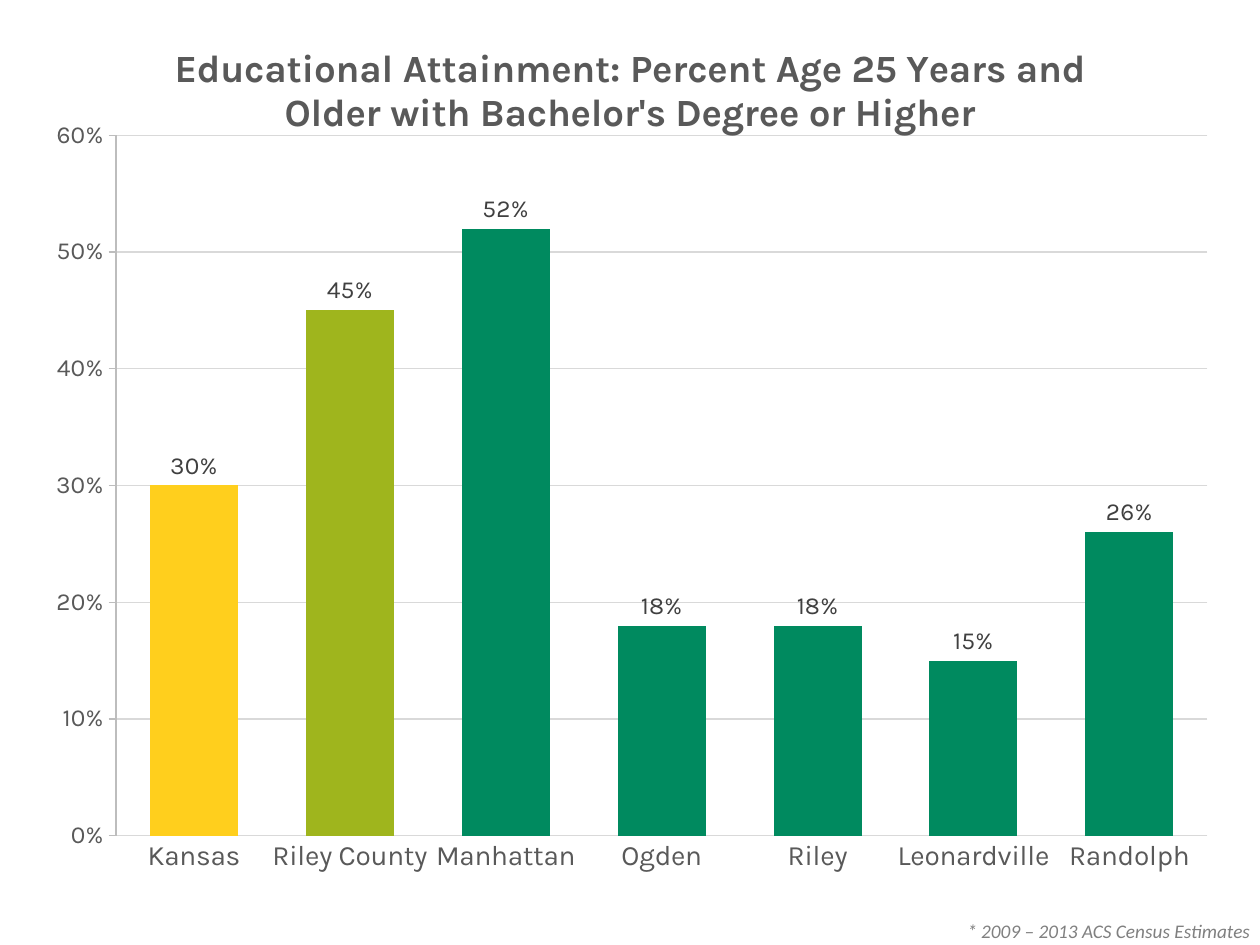
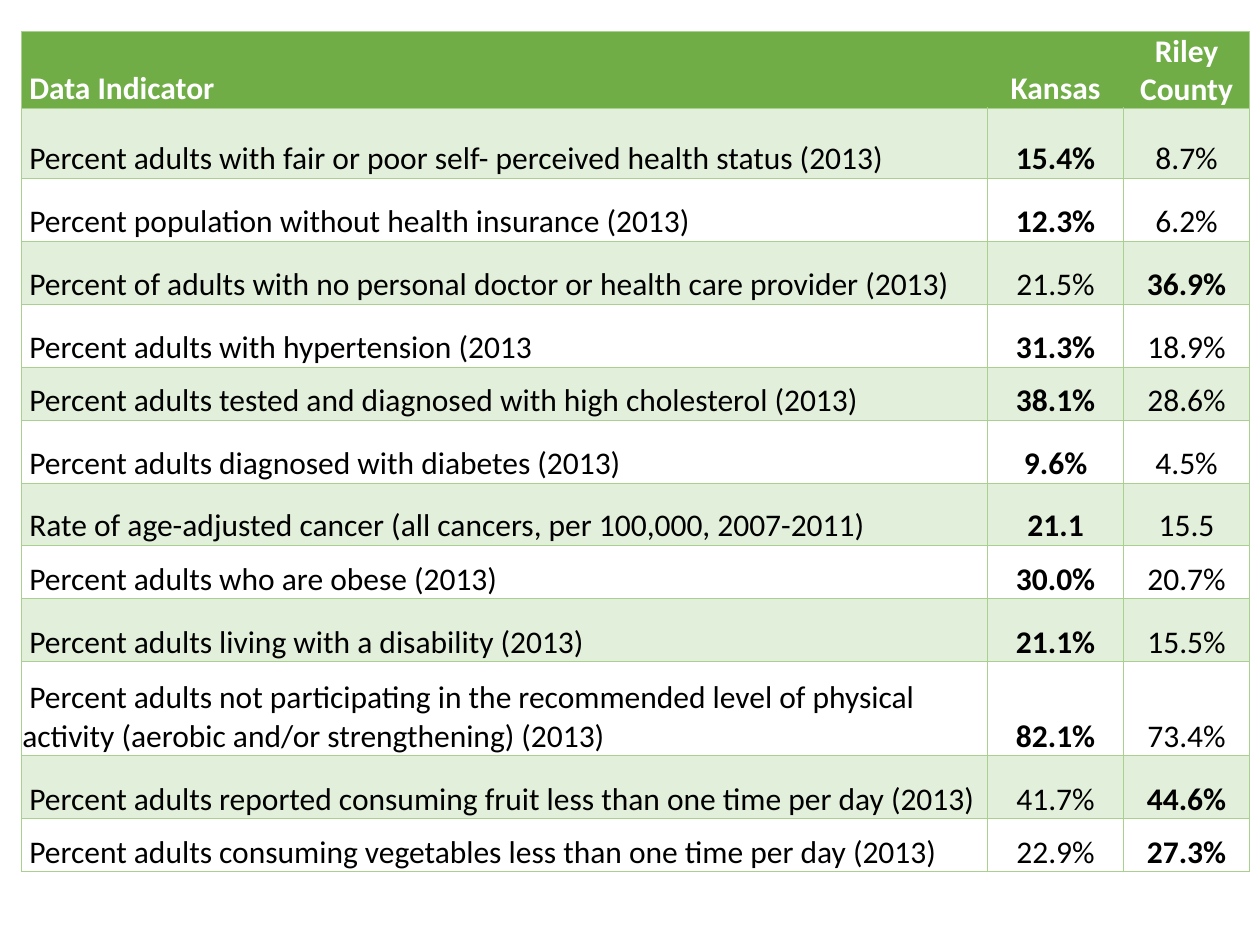
from dataclasses import dataclass

from lxml import etree
from pptx import Presentation
from pptx.chart.data import CategoryChartData
from pptx.dml.color import RGBColor
from pptx.enum.chart import XL_CHART_TYPE, XL_LABEL_POSITION, XL_TICK_MARK
from pptx.enum.text import MSO_ANCHOR, PP_ALIGN
from pptx.oxml.ns import qn
from pptx.slide import Slide
from pptx.table import _Cell
from pptx.text.text import Font
from pptx.util import Cm, Pt

COLUMN_CLUSTERED = XL_CHART_TYPE.COLUMN_CLUSTERED
OUTSIDE_END = XL_LABEL_POSITION.OUTSIDE_END
TICK_NONE, TICK_OUT = XL_TICK_MARK.NONE, XL_TICK_MARK.OUTSIDE
BOTTOM = MSO_ANCHOR.BOTTOM
LEFT, CENTER = PP_ALIGN.LEFT, PP_ALIGN.CENTER

# Shared fonts and colours
BODY_FONT, CHART_FONT = "Calibri", "Karla"
WHITE = RGBColor(0xFF, 0xFF, 0xFF)
BLACK = RGBColor(0x00, 0x00, 0x00)
CHART_TEXT = RGBColor(0x59, 0x59, 0x59)
LABEL_TEXT = RGBColor(0x40, 0x40, 0x40)
NOTE_GREY = RGBColor(0x80, 0x80, 0x80)
GRID_GREY = RGBColor(0xD9, 0xD9, 0xD9)
AXIS_GREY = RGBColor(0xBD, 0xBD, 0xBD)
STATE_YELLOW = RGBColor(0xFF, 0xCF, 0x1D)
COUNTY_LIME = RGBColor(0x9F, 0xB5, 0x1D)
CITY_GREEN = RGBColor(0x00, 0x8A, 0x5F)
SERIES_GREEN = RGBColor(0x06, 0x62, 0x43)
HEADER_GREEN = RGBColor(0x70, 0xAD, 0x47)
BAND_GREEN = RGBColor(0xE2, 0xEF, 0xDA)
BORDER_GREEN = RGBColor(0xA9, 0xD0, 0x8E)

# Chart size in cm
CHART_WIDTH, CHART_HEIGHT = 25.4, 18.85


@dataclass
class Place:
    name: str
    share: float
    color: RGBColor = CITY_GREEN


@dataclass
class Indicator:
    label: str
    kansas: str
    county: str
    height: float = 1.27  # cm


PLACES = [
    Place("Kansas", 0.30, STATE_YELLOW),
    Place("Riley County", 0.45, COUNTY_LIME),
    Place("Manhattan", 0.52),
    Place("Ogden", 0.18),
    Place("Riley", 0.18),
    Place("Leonardville", 0.15),
    Place("Randolph", 0.26),
]

HEADER = Indicator("Data Indicator", "Kansas", "Riley County", 1.5)
INDICATORS = [
    Indicator("Percent adults with fair or poor self- perceived health status (2013)",
              "15.4%", "8.7%", 1.42),
    Indicator("Percent population without health insurance (2013)", "12.3%", "6.2%"),
    Indicator("Percent of adults with no personal doctor or health care provider (2013)",
              "21.5%", "36.9%"),
    Indicator("Percent adults with hypertension (2013", "31.3%", "18.9%"),
    Indicator("Percent adults tested and diagnosed with high cholesterol (2013)",
              "38.1%", "28.6%", 1.07),
    Indicator("Percent adults diagnosed with diabetes (2013)", "9.6%", "4.5%"),
    Indicator("Rate of age-adjusted cancer (all cancers, per 100,000, 2007-2011)",
              "21.1", "15.5", 1.25),
    Indicator("Percent adults who are obese (2013)", "30.0%", "20.7%", 1.07),
    Indicator("Percent adults living with a disability (2013)", "21.1%", "15.5%"),
    Indicator("Percent adults not participating in the recommended level of physical "
              "activity (aerobic and/or strengthening) (2013)", "82.1%", "73.4%", 1.9),
    Indicator("Percent adults reported consuming fruit less than one time per day (2013)",
              "41.7%", "44.6%"),
    Indicator("Percent adults consuming vegetables less than one time per day (2013)",
              "22.9%", "27.3%", 1.07),
]
COLUMN_WIDTHS = (19.48, 2.74, 2.54)  # cm


def style_font(font: Font, name: str, size: float, color: RGBColor,
               bold: bool = False, italic: bool = False) -> None:
    font.name, font.size = name, Pt(size)
    font.bold, font.italic = bold, italic
    font.color.rgb = color


def style_line(line, color: RGBColor) -> None:
    line.color.rgb = color
    line.width = Pt(0.75)


def set_plot_layout(chart, x: float, y: float, w: float, h: float) -> None:
    """Fix the inner plot area, given in cm from the chart's corner."""
    plot_area = chart._chartSpace.chart.plotArea
    for old in plot_area.findall(qn("c:layout")):
        plot_area.remove(old)
    layout = etree.Element(qn("c:layout"))
    manual = etree.SubElement(layout, qn("c:manualLayout"))
    for tag, val in (("layoutTarget", "inner"), ("xMode", "edge"), ("yMode", "edge"),
                     ("x", x / CHART_WIDTH), ("y", y / CHART_HEIGHT),
                     ("w", w / CHART_WIDTH), ("h", h / CHART_HEIGHT)):
        etree.SubElement(manual, qn(f"c:{tag}")).set("val", str(val))
    plot_area.insert(0, layout)


def add_attainment_chart(s: Slide) -> None:
    data = CategoryChartData(number_format="0%")
    data.categories = [place.name for place in PLACES]
    data.add_series("Series 1", [place.share for place in PLACES])
    chart = s.shapes.add_chart(COLUMN_CLUSTERED, Cm(0), Cm(0.2), Cm(CHART_WIDTH),
                               Cm(CHART_HEIGHT), data).chart
    style_font(chart.font, BODY_FONT, 10, BLACK)
    chart.has_legend = False
    set_plot_layout(chart, 2.34, 2.53, 22, 14.12)

    # Title
    tf = chart.chart_title.text_frame
    tf.text = ("Educational Attainment: Percent Age 25 Years and "
               "Older with Bachelor's Degree or Higher")
    style_font(tf.paragraphs[0].runs[0].font, CHART_FONT, 22, CHART_TEXT, bold=True)
    chart.chart_title.include_in_layout = False

    # Axes
    places, shares = chart.category_axis, chart.value_axis
    for axis, size, tick, color in ((places, 16, TICK_NONE, GRID_GREY),
                                    (shares, 14, TICK_OUT, AXIS_GREY)):
        style_font(axis.tick_labels.font, CHART_FONT, size, CHART_TEXT)
        axis.major_tick_mark, axis.minor_tick_mark = tick, TICK_NONE
        style_line(axis.format.line, color)
    shares.minimum_scale, shares.maximum_scale, shares.major_unit = 0, 0.6, 0.1
    shares.tick_labels.number_format = "0%"
    shares.tick_labels.number_format_is_linked = False
    shares.has_major_gridlines = True
    style_line(shares.major_gridlines.format.line, GRID_GREY)

    # Columns and their labels
    plot = chart.plots[0]
    plot.gap_width, plot.vary_by_categories = 77, False
    series = plot.series[0]
    series.format.fill.solid()
    series.format.fill.fore_color.rgb = SERIES_GREEN
    for i, place in enumerate(PLACES):
        fill = series.points[i].format.fill
        fill.solid()
        fill.fore_color.rgb = place.color
    labels = series.data_labels
    labels.show_value = True
    labels.position = OUTSIDE_END
    labels.number_format, labels.number_format_is_linked = "0%", False
    style_font(labels.font, CHART_FONT, 14, LABEL_TEXT)


def add_source_note(s: Slide) -> None:
    tf = s.shapes.add_textbox(Cm(19.25), Cm(18.4), Cm(6.15), Cm(0.65)).text_frame
    tf.word_wrap = False
    tf.margin_right = Cm(0)  # leaves room for the whole note on one line
    tf.text = "* 2009 – 2013 ACS Census Estimates"
    tf.paragraphs[0].alignment = LEFT
    style_font(tf.paragraphs[0].runs[0].font, BODY_FONT, 11, NOTE_GREY, italic=True)


def set_borders(cell: _Cell, hidden: str) -> None:
    """Draw thin borders, leaving out the sides named in hidden."""
    tc_pr = cell._tc.get_or_add_tcPr()
    for side in "LRTB":
        ln = etree.SubElement(tc_pr, qn(f"a:ln{side}"), w=str(Pt(0.5)))
        if side in hidden:
            etree.SubElement(ln, qn("a:noFill"))
        else:
            fill = etree.SubElement(ln, qn("a:solidFill"))
            etree.SubElement(fill, qn("a:srgbClr"), val=str(BORDER_GREEN))


def fill_cell(cell: _Cell, text: str, align: PP_ALIGN, fill: RGBColor,
              color: RGBColor, bold: bool, hidden: str = "") -> None:
    set_borders(cell, hidden)
    cell.fill.solid()
    cell.fill.fore_color.rgb = fill
    cell.vertical_anchor = BOTTOM
    cell.margin_left = cell.margin_right = cell.margin_top = Cm(0.02)
    cell.margin_bottom = Cm(0)
    p = cell.text_frame.paragraphs[0]
    p.text = text
    p.alignment = align
    if align == LEFT:
        p_pr = p._p.get_or_add_pPr()
        p_pr.set("marL", "0")
        p_pr.set("indent", str(Cm(0.14)))
    style_font(p.runs[0].font, BODY_FONT, 18, color, bold)


def add_indicator_table(s: Slide) -> None:
    rows = [HEADER, *INDICATORS]
    table = s.shapes.add_table(len(rows), len(COLUMN_WIDTHS), Cm(0.43), Cm(0.63),
                               Cm(sum(COLUMN_WIDTHS)),
                               Cm(sum(row.height for row in rows))).table
    table.first_row = table.horz_banding = False
    for column, width in zip(table.columns, COLUMN_WIDTHS):
        column.width = Cm(width)

    # Header row, without inner vertical lines
    table.rows[0].height = Cm(HEADER.height)
    headings = (HEADER.label, HEADER.kansas, HEADER.county)
    for c, (text, hidden) in enumerate(zip(headings, ("R", "LR", "L"))):
        fill_cell(table.cell(0, c), text, CENTER if c else LEFT,
                  HEADER_GREEN, WHITE, True, hidden)

    # Indicator rows: the higher of the two values is bold
    for r, row in enumerate(INDICATORS, start=1):
        table.rows[r].height = Cm(row.height)
        band = BAND_GREEN if r % 2 else WHITE
        higher = max(row.kansas, row.county, key=lambda v: float(v.rstrip("%")))
        fill_cell(table.cell(r, 0), row.label, LEFT, band, BLACK, False)
        for c, value in enumerate((row.kansas, row.county), start=1):
            fill_cell(table.cell(r, c), value, CENTER, band, BLACK, value == higher)


def main() -> None:
    prs = Presentation()
    prs.slide_width, prs.slide_height = Cm(25.4), Cm(19.05)
    blank = prs.slide_layouts[6]

    # Slide 1: educational attainment
    s = prs.slides.add_slide(blank)
    add_source_note(s)
    add_attainment_chart(s)

    # Slide 2: health indicators
    add_indicator_table(prs.slides.add_slide(blank))

    prs.save("out.pptx")


if __name__ == "__main__":
    main()
